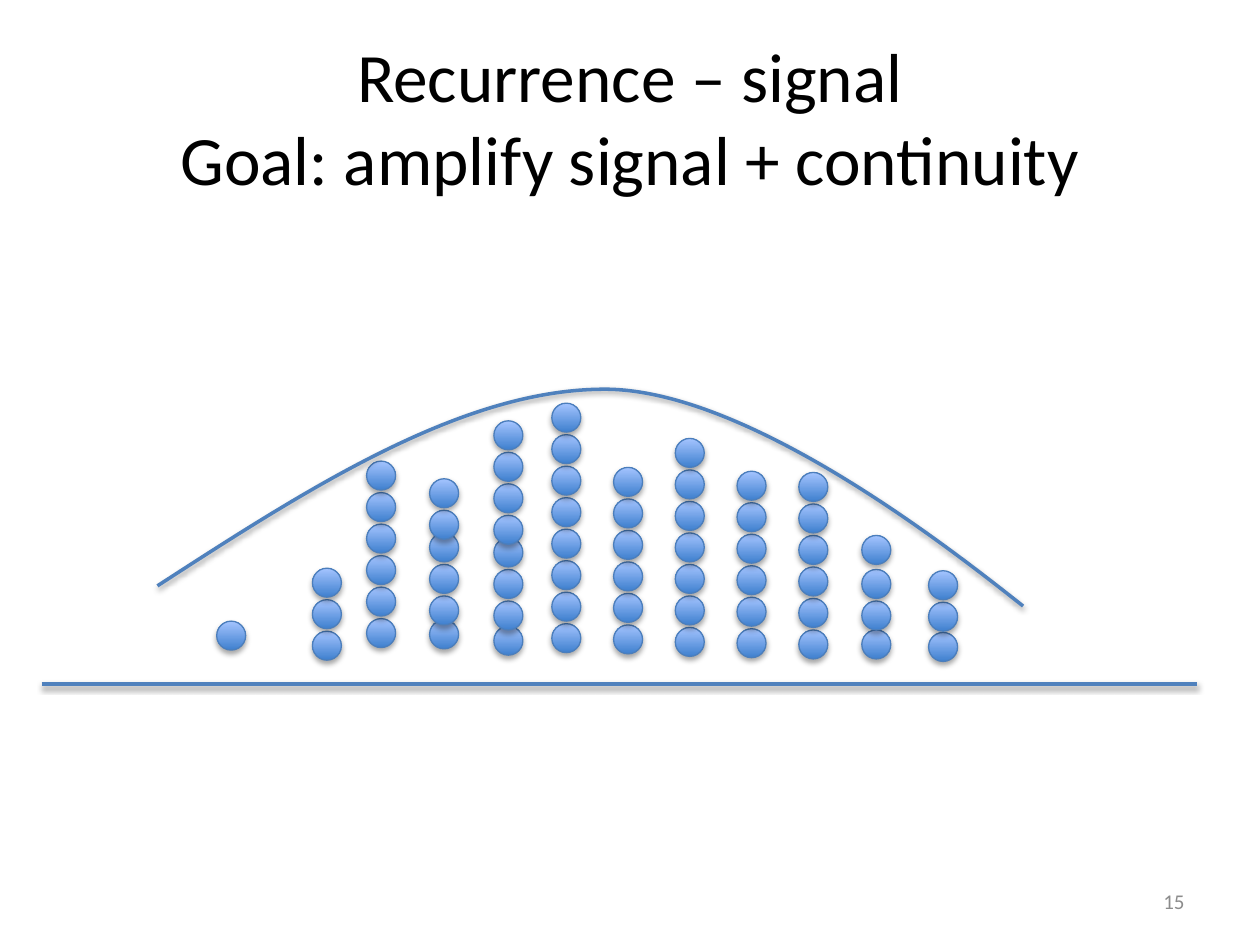
import pptx
import pptx.util
import pptx.dml.color
import pptx.enum.shapes
import pptx.enum.text
import pptx.oxml.ns
from lxml import etree

Inches, Pt = pptx.util.Inches, pptx.util.Pt
qn = pptx.oxml.ns.qn
ALIGN = pptx.enum.text.PP_ALIGN

COLORS = {
    "line": "4F81BD",
    "ball_edge": "4B7EBC",
    "ball_bottom": "3F80CE",
    "ball_top": "A4C4FF",
    "shadow": "000000",
    "title": "000000",
    "number": "8C8C8C",
}

BALL = 0.23
STEP = 0.25
# Left of each column, then its stacks: (rise of the lowest ball's top, count)
COLUMNS = [
    (1.39, [(0.50, 1)]),
    (2.15, [(0.42, 3)]),
    (2.58, [(0.52, 6)]),
    (3.08, [(0.51, 1), (0.70, 3), (1.38, 2)]),
    (3.59, [(0.46, 1), (0.66, 3), (1.34, 4)]),
    (4.05, [(0.48, 8)]),
    (4.54, [(0.47, 6)]),
    (5.03, [(0.45, 7)]),
    (5.52, [(0.44, 6)]),
    (6.01, [(0.43, 6)]),
    (6.51, [(0.43, 1), (0.66, 2), (1.18, 1)]),
    (7.04, [(0.41, 1), (0.65, 2)]),
]
# Start point, then two control points and an end point for each curve segment
ENVELOPE = [(0.92, 1.58), (2.14, 0.79), (3.37, 0), (4.51, 0.02),
            (5.66, 0.05), (7.27, 1.33), (7.79, 1.74)]


def rgb(name):
    return pptx.dml.color.RGBColor.from_string(COLORS[name])


def set_line(shape, color, width):
    shape.line.color.rgb = rgb(color)
    shape.line.width = Pt(width)


def add_shadow(shape, distance, opacity):
    """Cast a soft shadow straight down; call it after fill and line are set."""
    effects = etree.SubElement(shape._element.spPr, qn("a:effectLst"))
    outer = etree.SubElement(effects, qn("a:outerShdw"), blurRad=str(Pt(3.1)),
                             dist=str(Pt(distance)), dir="5400000", rotWithShape="0")
    color = etree.SubElement(outer, qn("a:srgbClr"), val=COLORS["shadow"])
    etree.SubElement(color, qn("a:alpha"), val=str(opacity * 1000))


def add_text(slide, left, top, width, height, lines, size, color, align):
    tf = slide.shapes.add_textbox(Inches(left), Inches(top),
                                  Inches(width), Inches(height)).text_frame
    tf.word_wrap = True
    tf.vertical_anchor = pptx.enum.text.MSO_ANCHOR.MIDDLE
    p = tf.paragraphs[0]
    p.alignment = align
    for i, line in enumerate(lines):
        if i:
            p.add_line_break()
        r = p.add_run()
        r.text = line
        r.font.name = "Calibri"
        r.font.size = Pt(size)
        r.font.color.rgb = rgb(color)


def add_ball(slide, left, top):
    sp = slide.shapes.add_shape(pptx.enum.shapes.MSO_SHAPE.OVAL, Inches(left),
                                Inches(top), Inches(BALL), Inches(BALL))
    sp.fill.gradient()
    sp.fill.gradient_angle = 90
    for stop, color, position in zip(sp.fill.gradient_stops,
                                     ("ball_bottom", "ball_top"), (0, 1)):
        stop.color.rgb = rgb(color)
        stop.position = position
    set_line(sp, "ball_edge", 0.75)
    add_shadow(sp, 1.8, 35)


def add_envelope(slide, left, top):
    points = [(Inches(left + x), Inches(top + y)) for x, y in ENVELOPE]
    builder = slide.shapes.build_freeform(*points[0])
    builder.add_line_segments(points[1:], close=False)
    sp = builder.convert_to_shape()
    # Turn each three straight segments into one Bézier segment
    segments = list(sp._element.iter(qn("a:lnTo")))
    for i in range(0, len(segments), 3):
        curve = etree.Element(qn("a:cubicBezTo"))
        segments[i].addprevious(curve)
        for segment in segments[i:i + 3]:
            curve.append(segment[0])
            segment.getparent().remove(segment)
    sp.fill.background()
    set_line(sp, "line", 2)
    add_shadow(sp, 1.6, 38)


def add_dot_plot(slide, left, top, width, height):
    """Balls stacked above a baseline, under a bell-shaped envelope."""
    bottom = top + height
    baseline = slide.shapes.add_connector(
        pptx.enum.shapes.MSO_CONNECTOR.STRAIGHT, Inches(left), Inches(bottom),
        Inches(left + width), Inches(bottom))
    set_line(baseline, "line", 2)
    add_shadow(baseline, 1.6, 38)
    for x, stacks in COLUMNS:
        for rise, count in stacks:
            for i in range(count):
                add_ball(slide, left + x, bottom - rise - i * STEP)
    add_envelope(slide, left, top)


def main():
    prs = pptx.Presentation()
    prs.slide_width, prs.slide_height = Inches(10), Inches(7.5)
    slide = prs.slides.add_slide(prs.slide_layouts[6])
    add_dot_plot(slide, 0.33, 3.07, 9.17, 2.36)
    add_text(slide, 0.5, 0.3, 9, 1.25,
             ["Recurrence – signal", "Goal: amplify signal + continuity"],
             39.6, "title", ALIGN.CENTER)
    add_text(slide, 7.17, 6.95, 2.33, 0.4, ["15"], 12, "number", ALIGN.RIGHT)
    prs.save("out.pptx")


if __name__ == "__main__":
    main()
